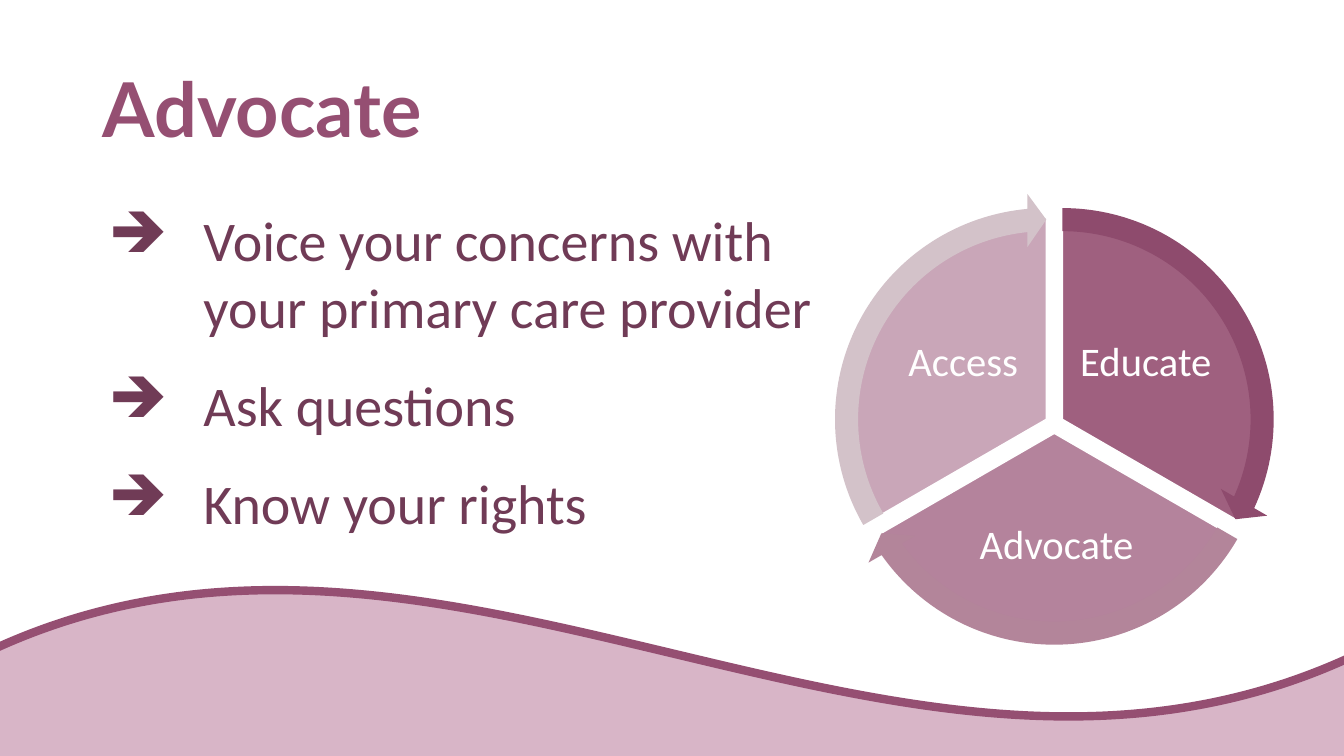
"""Build the Advocate slide: title, bullet list, three-part cycle and a wave."""
from lxml import etree
from pptx import Presentation, util as u
from pptx.dml.color import RGBColor
from pptx.enum import shapes, text
from pptx.oxml.ns import qn

WIDTH, HEIGHT = u.Emu(12192000), u.Emu(6858000)
WHITE = RGBColor(0xFF, 0xFF, 0xFF)
PLUM = RGBColor(0x95, 0x4F, 0x72)
DARK_PLUM = RGBColor(0x70, 0x3B, 0x56)
PALE_PINK = RGBColor(0xD8, 0xB5, 0xC7)
EDUCATE_ARROW = RGBColor(0x8E, 0x4B, 0x6D)
ADVOCATE_ARROW = RGBColor(0xB3, 0x85, 0x9A)
ACCESS_ARROW = RGBColor(0xD3, 0xC2, 0xC9)

SECTOR_SIZE, ARROW_SIZE = 30, 33.7
DEGREE = 0.6
ARROWHEAD = 3.275
CYCLE = [
    ("Educate", 270, 30, 90, EDUCATE_ARROW, (79.05, 55.47), (79.9, 40.13, 10.73, 15.87)),
    ("Advocate", 30, 150, 70, ADVOCATE_ARROW, (78.45, 57.33), (70.59, 65.2, 16.05, 14)),
    ("Access", 150, 270, 50, ACCESS_ARROW, (77.85, 55.47), (66.32, 40.13, 10.73, 15.87)),
]
ADVICE = [
    "Voice your concerns with your primary care provider",
    "Ask questions",
    "Know your rights",
]


def area(left, top, width, height):
    """Turn percentages of the slide into lengths."""
    return (int(WIDTH * left / 100), int(HEIGHT * top / 100),
            int(WIDTH * width / 100), int(HEIGHT * height / 100))


def round_area(center, size):
    """Give a square around a center, its side a percentage of slide width."""
    height = size * WIDTH / HEIGHT
    return area(center[0] - size / 2, center[1] - height / 2, size, height)


def add_figure(slide, preset, place, fill, line=None, line_width=1, adjustments=()):
    """Add a flat preset shape."""
    figure = slide.shapes.add_shape(preset, *place)
    figure.shadow.inherit = False
    figure.fill.solid()
    figure.fill.fore_color.rgb = fill
    if line is None:
        figure.line.fill.background()
    else:
        figure.line.color.rgb = line
        figure.line.width = u.Pt(line_width)
    for index, value in enumerate(adjustments):
        figure.adjustments[index] = value
    return figure


def set_opacity(figure, percent):
    """Make the solid fill of a shape partly transparent."""
    color = figure.fill._xPr.find(qn("a:solidFill"))[0]
    etree.SubElement(color, qn("a:alpha"), val=str(percent * 1000))


def add_frame(slide, place, anchor, inset=None):
    """Add a wrapping text box and return its text frame."""
    frame = slide.shapes.add_textbox(*place).text_frame
    frame.word_wrap = True
    frame.vertical_anchor = anchor
    if inset is not None:
        frame.margin_left = frame.margin_right = inset
        frame.margin_top = frame.margin_bottom = inset
    return frame


def add_words(paragraph, words, size, font, color, bold=False):
    """Add one styled run."""
    run = paragraph.add_run()
    run.text = words
    run.font.size = u.Pt(size)
    run.font.name = font
    run.font.color.rgb = color
    run.font.bold = bold


def add_arrow_bullet(paragraph):
    """Give a paragraph a hanging arrow bullet."""
    properties = paragraph._p.get_or_add_pPr()
    properties.set("marL", str(u.Inches(1)))
    properties.set("indent", str(-u.Inches(0.94)))
    bullet_color = etree.SubElement(properties, qn("a:buClr"))
    etree.SubElement(bullet_color, qn("a:srgbClr"), val=str(DARK_PLUM))
    etree.SubElement(properties, qn("a:buChar"), char="➔")


def add_title(slide, words):
    """Add the slide title."""
    frame = add_frame(slide, area(6.9, 5.33, 86.27, 19.33), text.MSO_ANCHOR.MIDDLE)
    title = frame.paragraphs[0]
    title.line_spacing = 0.9
    add_words(title, words, 54, "Lato", PLUM, bold=True)


def add_advice(slide, lines):
    """Add the bullet list."""
    frame = add_frame(slide, area(6.9, 26.53, 56.64, 63.47), text.MSO_ANCHOR.TOP)
    for index, line in enumerate(lines):
        advice = frame.add_paragraph() if index else frame.paragraphs[0]
        add_arrow_bullet(advice)
        advice.space_before = u.Pt(10 if index else 0)
        advice.space_after = u.Pt(12)
        add_words(advice, line, 40, "Calibri", DARK_PLUM)


def add_sector(slide, start, end, opacity, center):
    """Add one slice of the cycle."""
    sector = add_figure(slide, shapes.MSO_SHAPE.PIE, round_area(center, SECTOR_SIZE),
                        PLUM, WHITE, adjustments=(start * DEGREE, end * DEGREE))
    set_opacity(sector, opacity)


def add_label(slide, words, place):
    """Add the caption of a slice."""
    frame = add_frame(slide, area(*place), text.MSO_ANCHOR.MIDDLE, u.Inches(0.04))
    label = frame.paragraphs[0]
    label.alignment = text.PP_ALIGN.CENTER
    label.line_spacing = 0.9
    add_words(label, words, 29, "Calibri", WHITE)


def add_cycle(slide):
    """Add slices with captions, then the arrows around them."""
    for name, start, end, opacity, _, center, label_place in CYCLE:
        add_sector(slide, start, end, opacity, center)
        add_label(slide, name, label_place)
    for _, start, end, _, color, center, _ in CYCLE:
        add_figure(slide, shapes.MSO_SHAPE.CIRCULAR_ARROW, round_area(center, ARROW_SIZE), color,
                   adjustments=(0.051, ARROWHEAD, end * DEGREE - ARROWHEAD,
                                start * DEGREE, 0.059))


def main():
    """Build and save the slide."""
    deck = Presentation()
    deck.slide_width, deck.slide_height = WIDTH, HEIGHT
    slide = deck.slides.add_slide(deck.slide_layouts[6])
    add_figure(slide, shapes.MSO_SHAPE.WAVE, area(-1.13, 77.73, 102.25, 69.47),
               PALE_PINK, PLUM, line_width=6)
    add_title(slide, "Advocate")
    add_advice(slide, ADVICE)
    add_cycle(slide)
    deck.save("out.pptx")


if __name__ == "__main__":
    main()
